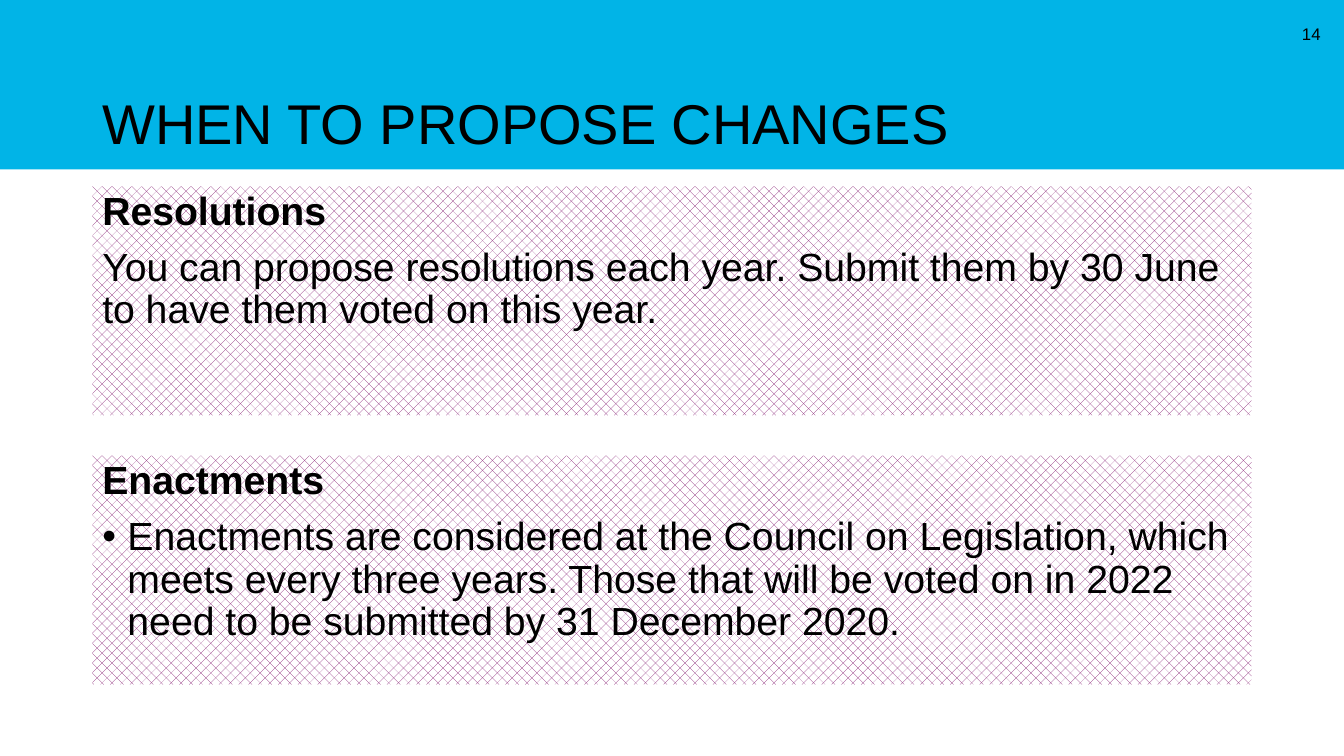
from dataclasses import dataclass

from lxml import etree
from pptx import Presentation
from pptx import util as u
from pptx.dml import color
from pptx.enum import dml, shapes, text
from pptx.oxml import ns


@dataclass(frozen=True)
class Theme:
    font: str = "Arial"
    ink: str = "000000"
    band: str = "01B4E7"
    pattern: str = "872175"
    paper: str = "FFFFFF"
    title_size: float = 40
    body_size: float = 28
    number_size: float = 12


THEME = Theme()
SLIDE_WIDTH, SLIDE_HEIGHT = 960, 540
MARGIN = 66
PANEL_TOP, PANEL_HEIGHT, PANEL_PITCH = 133.2, 163.5, 192.3
BULLET_INDENT = 18

PANELS = [
    ("Resolutions",
     "You can propose resolutions each year. Submit them by 30 June "
     "to have them voted on this year.", False),
    ("Enactments",
     "Enactments are considered at the Council on Legislation, which meets "
     "every three years. Those that will be voted on in 2022 need to be "
     "submitted by 31 December 2020.", True),
]


def rgb(value):
    return color.RGBColor.from_string(value)


def add_rect(slide, left, top, width, height):
    rect = slide.shapes.add_shape(
        shapes.MSO_SHAPE.RECTANGLE, u.Pt(left), u.Pt(top), u.Pt(width), u.Pt(height))
    rect.shadow.inherit = False
    rect.line.fill.background()
    return rect


def add_frame(slide, left, top, width, height):
    box = slide.shapes.add_textbox(u.Pt(left), u.Pt(top), u.Pt(width), u.Pt(height))
    return box.text_frame


def write(paragraph, wording, size=THEME.body_size, bold=False, bullet=False,
          align=text.PP_ALIGN.LEFT, line_spacing=0.9, before=0):
    paragraph.alignment = align
    paragraph.line_spacing = line_spacing
    paragraph.space_before = u.Pt(before)
    if bullet:
        properties = paragraph._p.get_or_add_pPr()
        properties.set("marL", str(u.Pt(BULLET_INDENT)))
        properties.set("indent", str(-u.Pt(BULLET_INDENT)))
        etree.SubElement(properties, ns.qn("a:buFont"), typeface=THEME.font)
        etree.SubElement(properties, ns.qn("a:buChar"), char="•")
    run = paragraph.add_run()
    run.text = wording
    run.font.name = THEME.font
    run.font.size = u.Pt(size)
    run.font.bold = bold
    run.font.color.rgb = rgb(THEME.ink)


def add_header(slide, left, top, width, height, title, number):
    band = add_rect(slide, left, top, width, height)
    band.fill.solid()
    band.fill.fore_color.rgb = rgb(THEME.band)

    page = add_frame(slide, left + width - 42.6, top + 9.4, 33, 28.8)
    page.word_wrap = True
    page.vertical_anchor = text.MSO_ANCHOR.MIDDLE
    write(page.paragraphs[0], number, size=THEME.number_size,
          align=text.PP_ALIGN.RIGHT, line_spacing=1.0)

    heading = add_frame(slide, left + MARGIN, top + 14.4, width - 2 * MARGIN, height - 16.6)
    heading.word_wrap = True
    heading.vertical_anchor = text.MSO_ANCHOR.BOTTOM
    heading.margin_top, heading.margin_bottom = 0, u.Pt(7.2)
    write(heading.paragraphs[0], title, size=THEME.title_size)


def add_panel(slide, left, top, width, height, heading, body, bullet):
    panel = add_rect(slide, left, top, width, height)
    panel.fill.patterned()
    panel.fill.pattern = dml.MSO_PATTERN.PERCENT_30
    panel.fill.fore_color.rgb = rgb(THEME.pattern)
    panel.fill.back_color.rgb = rgb(THEME.paper)
    frame = panel.text_frame
    frame.word_wrap = True
    frame.vertical_anchor = text.MSO_ANCHOR.TOP
    write(frame.paragraphs[0], heading, bold=True, before=10)
    write(frame.add_paragraph(), body, bullet=bullet, before=10)


def main():
    deck = Presentation()
    deck.slide_width, deck.slide_height = u.Pt(SLIDE_WIDTH), u.Pt(SLIDE_HEIGHT)
    slide = deck.slides.add_slide(deck.slide_layouts[6])
    add_header(slide, 0, 0, SLIDE_WIDTH, 121, "WHEN TO PROPOSE CHANGES", "14")
    for index, (heading, body, bullet) in enumerate(PANELS):
        add_panel(slide, MARGIN, PANEL_TOP + index * PANEL_PITCH,
                  SLIDE_WIDTH - 2 * MARGIN, PANEL_HEIGHT, heading, body, bullet)
    deck.save("out.pptx")


if __name__ == "__main__":
    main()
